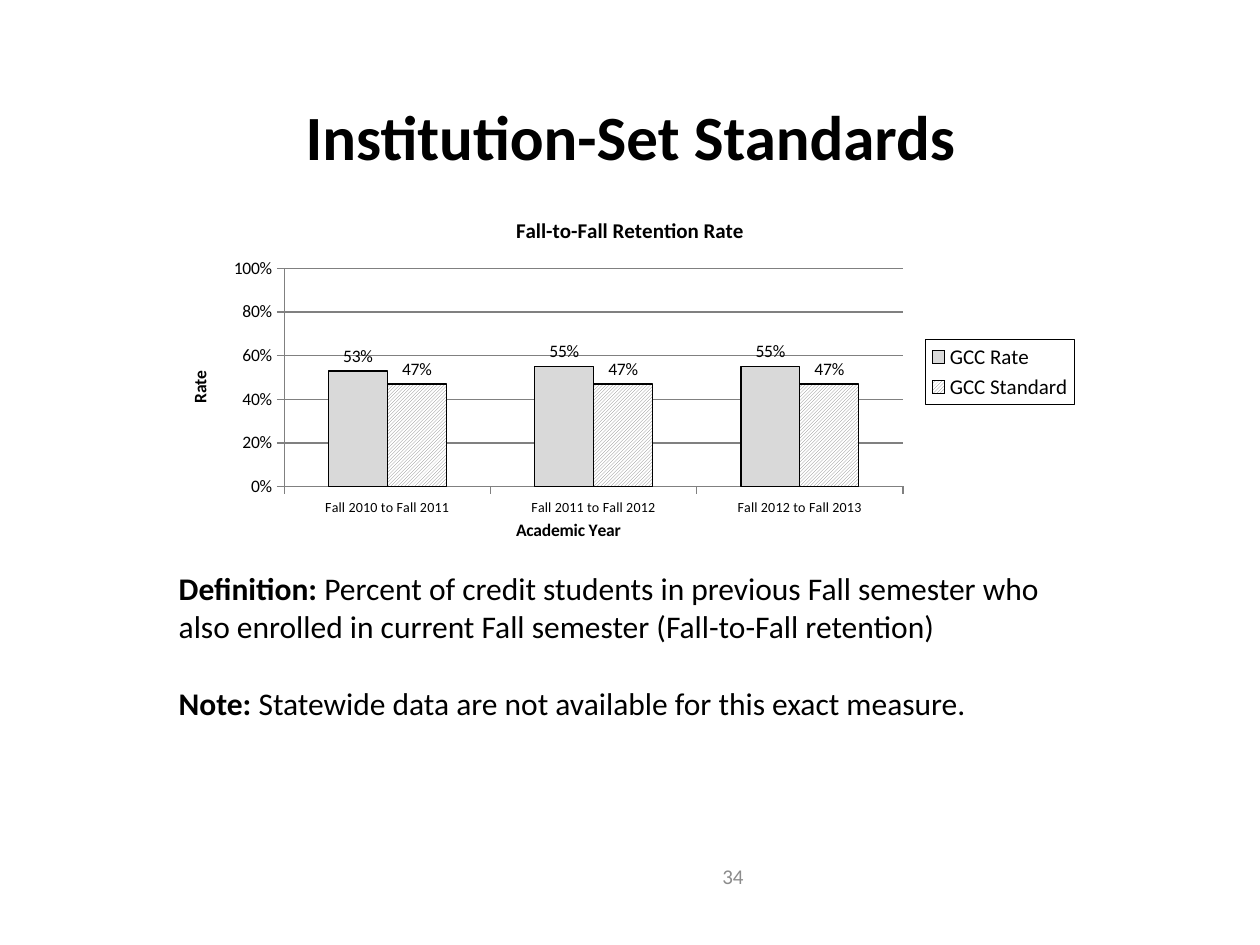
from lxml import etree
from pptx import Presentation
from pptx.chart.data import CategoryChartData
from pptx.dml.color import RGBColor
from pptx.enum.chart import XL_CHART_TYPE, XL_LABEL_POSITION, XL_LEGEND_POSITION, XL_TICK_MARK
from pptx.enum.dml import MSO_PATTERN
from pptx.enum.text import MSO_ANCHOR, PP_ALIGN
from pptx.oxml import parse_xml
from pptx.oxml.ns import nsdecls, qn
from pptx.util import Inches, Pt

BLACK = RGBColor(0x00, 0x00, 0x00)
WHITE = RGBColor(0xFF, 0xFF, 0xFF)
LIGHT_GRAY = RGBColor(0xD9, 0xD9, 0xD9)
MID_GRAY = RGBColor(0x80, 0x80, 0x80)
NUMBER_GRAY = RGBColor(0x8C, 0x8C, 0x8C)
FONT = "Calibri"
COLUMNS = XL_CHART_TYPE.COLUMN_CLUSTERED
LABEL_OUTSIDE = XL_LABEL_POSITION.OUTSIDE_END
LEGEND_RIGHT = XL_LEGEND_POSITION.RIGHT
TICK_OUT = XL_TICK_MARK.OUTSIDE
TICK_NONE = XL_TICK_MARK.NONE
HATCH = MSO_PATTERN.LIGHT_UPWARD_DIAGONAL
LEFT, CENTER, RIGHT = PP_ALIGN.LEFT, PP_ALIGN.CENTER, PP_ALIGN.RIGHT
TOP, MIDDLE = MSO_ANCHOR.TOP, MSO_ANCHOR.MIDDLE

PERIODS = ["Fall 2010 to Fall 2011", "Fall 2011 to Fall 2012", "Fall 2012 to Fall 2013"]
RATES = {"GCC Rate": (0.53, 0.55, 0.55), "GCC Standard": (0.47, 0.47, 0.47)}
NOTES = [
    ("Definition: ", "Percent of credit students in previous Fall semester who "
                     "also enrolled in current Fall semester (Fall-to-Fall retention)"),
    ("Note:", " Statewide data are not available for this exact measure."),
]


def style_font(font, size, bold=False, color=BLACK):
    """Apply the slide's typeface with a size, weight and colour."""
    font.name, font.size, font.bold = FONT, Pt(size), bold
    font.color.rgb = color


def add_run(p, text, size, bold=False, color=BLACK):
    """Add one styled run to a paragraph."""
    r = p.add_run()
    r.text = text
    style_font(r.font, size, bold, color)


def place_title(s, box):
    """Move and format the title placeholder."""
    sp = s.shapes.title
    sp.left, sp.top, sp.width, sp.height = box
    tf = sp.text_frame
    tf.word_wrap = False
    tf.vertical_anchor = TOP
    p = tf.paragraphs[0]
    p.alignment = CENTER
    add_run(p, "Institution-Set Standards", 36, True)


def add_notes(s, box):
    """Add the definition and note paragraphs."""
    tf = s.shapes.add_textbox(*box).text_frame
    tf.word_wrap = True
    for i, (lead, body) in enumerate(NOTES):
        p = tf.add_paragraph() if i else tf.paragraphs[0]
        p.alignment = LEFT
        p.space_before = Pt(22 if i else 0)
        add_run(p, lead, 18, True)
        add_run(p, body, 18)


def add_page_number(s, box):
    """Add the page number."""
    tf = s.shapes.add_textbox(*box).text_frame
    tf.word_wrap = True
    tf.vertical_anchor = MIDDLE
    p = tf.paragraphs[0]
    p.alignment = RIGHT
    add_run(p, "34", 12, color=NUMBER_GRAY)


def set_title(owner, text, size):
    """Give a chart or an axis a bold title."""
    owner.has_title = True
    add_run(owner.axis_title.text_frame.paragraphs[0] if hasattr(owner, "axis_title")
            else owner.chart_title.text_frame.paragraphs[0], text, size, True)


def format_axis(axis, title, size):
    """Format an axis with its title, ticks and line."""
    set_title(axis, title, 10)
    axis.major_tick_mark, axis.minor_tick_mark = TICK_OUT, TICK_NONE
    style_font(axis.tick_labels.font, size)
    axis.format.line.color.rgb = MID_GRAY


def format_series(series):
    """Outline a series and show its values as percentages."""
    series.smooth = False if hasattr(series, "smooth") else None
    series.format.line.color.rgb = BLACK
    series.format.line.width = Pt(0.75)
    labels = series.data_labels
    labels.show_value = True
    labels.number_format, labels.number_format_is_linked = "0%", False
    labels.position = LABEL_OUTSIDE
    style_font(labels.font, 10)


def set_plot_layout(chart, x, y, w, h):
    """Fix the inner plot area as fractions of the chart."""
    area = chart.element.find(".//" + qn("c:plotArea"))
    for old in area.findall(qn("c:layout")):
        area.remove(old)
    layout = etree.Element(qn("c:layout"))
    manual = etree.SubElement(layout, qn("c:manualLayout"))
    for tag, val in (("layoutTarget", "inner"), ("xMode", "edge"), ("yMode", "edge"),
                     ("x", x), ("y", y), ("w", w), ("h", h)):
        etree.SubElement(manual, qn("c:" + tag)).set("val", str(val))
    area.insert(0, layout)


def add_legend(chart):
    """Add an outlined legend at the right."""
    chart.has_legend = True
    legend = chart.legend
    legend.position = LEGEND_RIGHT
    legend.include_in_layout = False
    style_font(legend.font, 12)
    outline = parse_xml(
        f'<c:spPr {nsdecls("c", "a")}><a:ln w="9525"><a:solidFill>'
        f'<a:srgbClr val="{BLACK}"/></a:solidFill></a:ln></c:spPr>')
    chart.element.find(".//" + qn("c:legend")).find(qn("c:txPr")).addprevious(outline)


def add_retention_chart(s, box):
    """Add the column chart of retention rates against the standard."""
    data = CategoryChartData(number_format="0%")
    data.categories = PERIODS
    for name, values in RATES.items():
        data.add_series(name, values)
    chart = s.shapes.add_chart(COLUMNS, *box, data).chart
    style_font(chart.font, 10)
    set_title(chart, "Fall-to-Fall Retention Rate", 12)
    format_axis(chart.category_axis, "Academic Year", 8)
    axis = chart.value_axis
    format_axis(axis, "Rate", 10)
    axis.minimum_scale, axis.maximum_scale, axis.major_unit = 0, 1, 0.2
    axis.tick_labels.number_format = "0%"
    axis.tick_labels.number_format_is_linked = False
    axis.major_gridlines.format.line.color.rgb = MID_GRAY
    plot = chart.plots[0]
    plot.gap_width, plot.overlap, plot.vary_by_categories = 150, 0, False
    rate, standard = plot.series
    for series in (rate, standard):
        format_series(series)
    rate.format.fill.solid()
    rate.format.fill.fore_color.rgb = LIGHT_GRAY
    fill = standard.format.fill
    fill.patterned()
    fill.pattern = HATCH
    fill.fore_color.rgb, fill.back_color.rgb = MID_GRAY, WHITE
    add_legend(chart)
    set_plot_layout(chart, 0.12, 0.2, 0.68, 0.63)


def main():
    """Build and save the slide."""
    prs = Presentation()
    prs.slide_width, prs.slide_height = Inches(10), Inches(7.5)
    s = prs.slides.add_slide(prs.slide_layouts[5])
    place_title(s, (Inches(2.29), Inches(0.72), Inches(5.43), Inches(0.71)))
    add_page_number(s, (Inches(4), Inches(6.75), Inches(2), Inches(0.4)))
    add_notes(s, (Inches(1.32), Inches(4.47), Inches(7.36), Inches(1.31)))
    add_retention_chart(s, (Inches(1.39), Inches(1.58), Inches(7.22), Inches(2.75)))
    prs.save("out.pptx")


if __name__ == "__main__":
    main()
